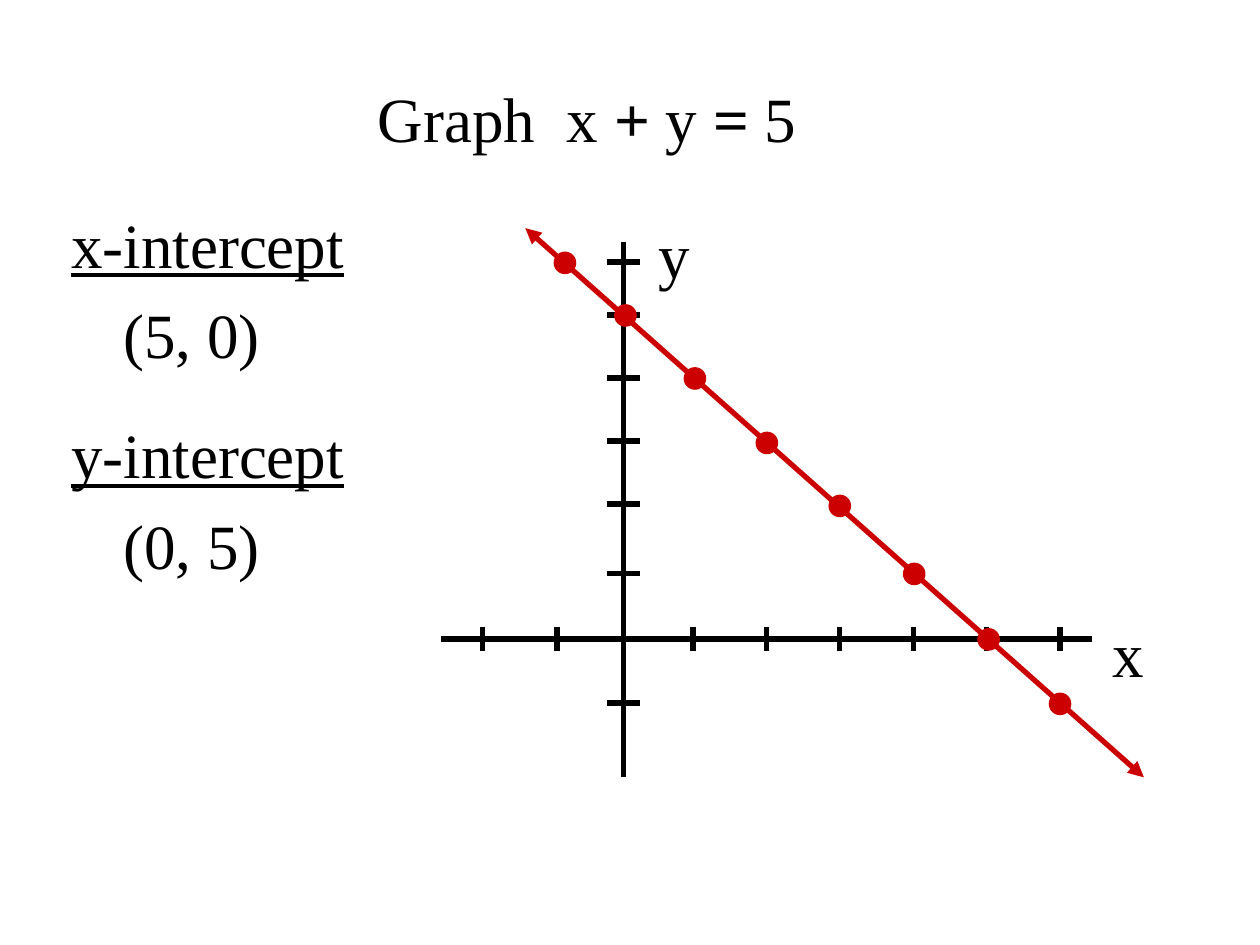
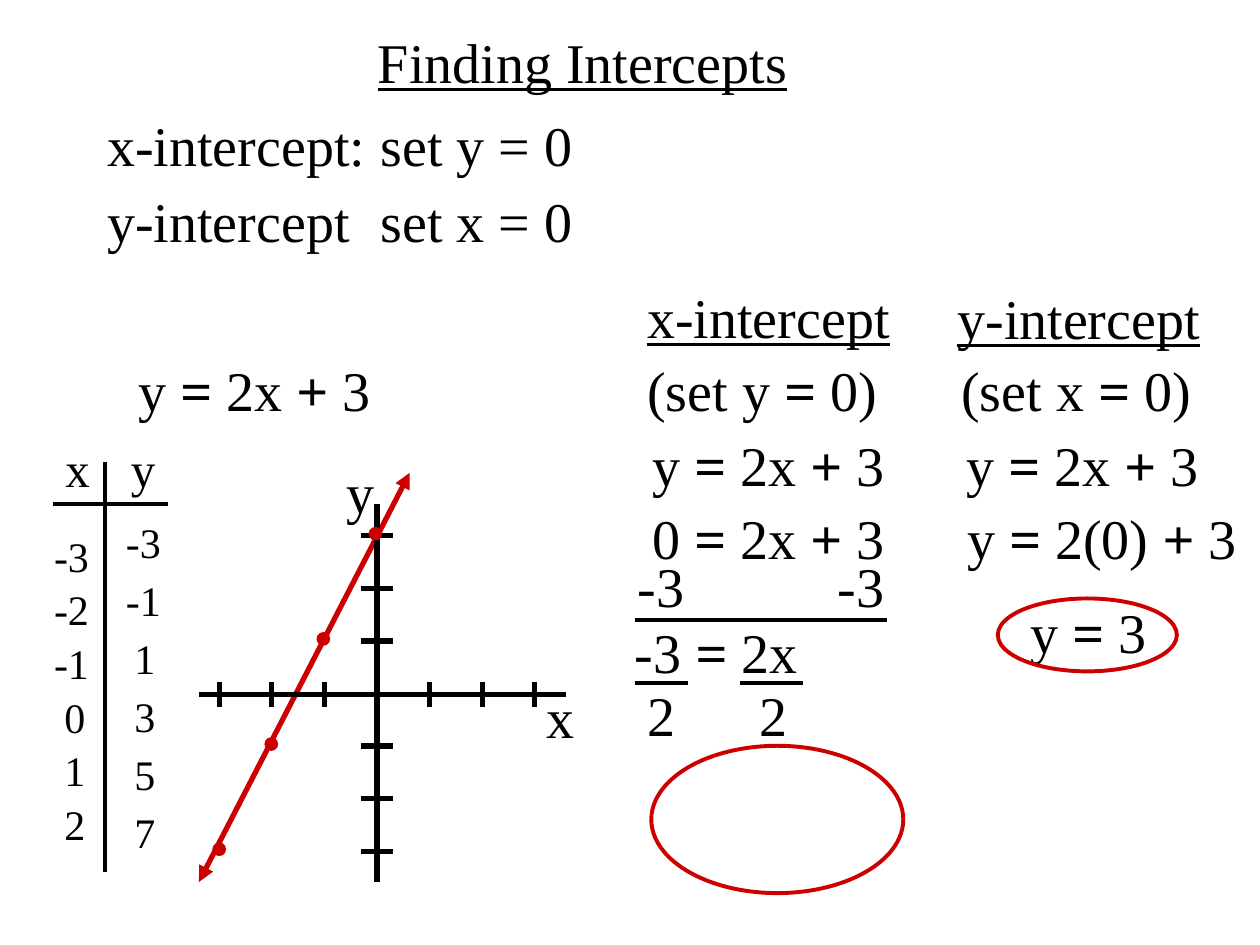
import dataclasses
import itertools
import typing

import lxml.etree
import pptx
import pptx.dml.color
import pptx.enum.shapes
import pptx.enum.text
import pptx.oxml.ns
import pptx.slide
import pptx.util

Cm = pptx.util.Cm
Pt = pptx.util.Pt
Point = tuple[float, float]


@dataclasses.dataclass(frozen=True)
class Theme:
    ink: pptx.dml.color.RGBColor = pptx.dml.color.RGBColor(0, 0, 0)
    accent: pptx.dml.color.RGBColor = pptx.dml.color.RGBColor(0xCC, 0, 0)
    font: str = "Times New Roman"
    large: int = 36
    body: int = 32
    heading: int = 28
    small: int = 24
    thick: float = 3
    medium: float = 2.25
    thin: float = 0.75


THEME = Theme()
WIDTH_SLACK = 0.05  # keeps tightly measured labels on one line


class Label(typing.NamedTuple):
    text: str
    left: float
    top: float
    width: float
    size: int = THEME.body
    underline: bool = False
    bold_operators: bool = True


class Line(typing.NamedTuple):
    start: Point
    end: Point
    weight: float = THEME.thick
    color: pptx.dml.color.RGBColor = THEME.ink
    arrows: bool = False


class Axes(typing.NamedTuple):
    """Two crossing axes with tick marks at the given positions."""
    origin: Point
    x_span: Point
    y_span: Point
    x_ticks: list[float]
    y_ticks: list[float]


def evenly(first: float, step: float, count: int, skip: int = -1) -> list[float]:
    """Equally spaced positions, leaving out the one at index skip."""
    return [first + step * index for index in range(count) if index != skip]


def add_label(slide: pptx.slide.Slide, label: Label) -> None:
    height = label.size * 1.2 / 72 * 2.54 + 0.25
    box = slide.shapes.add_textbox(
        Cm(label.left), Cm(label.top), Cm(label.width + WIDTH_SLACK), Cm(height))
    frame = box.text_frame
    frame.word_wrap = False
    frame.auto_size = pptx.enum.text.MSO_AUTO_SIZE.SHAPE_TO_FIT_TEXT
    paragraph = frame.paragraphs[0]
    for is_operator, letters in itertools.groupby(label.text, lambda c: c in "=+"):
        run = paragraph.add_run()
        run.text = "".join(letters)
        run.font.bold = is_operator and label.bold_operators
        run.font.underline = label.underline
        format_run(run, label.size)


def format_run(run: typing.Any, size: int) -> None:
    run.font.name = THEME.font
    run.font.size = Pt(size)
    run.font.color.rgb = THEME.ink


def add_line(slide: pptx.slide.Slide, line: Line) -> None:
    connector = slide.shapes.add_connector(
        pptx.enum.shapes.MSO_CONNECTOR.STRAIGHT,
        *(Cm(value) for value in line.start + line.end))
    connector.line.color.rgb = line.color
    connector.line.width = Pt(line.weight)
    qualify = pptx.oxml.ns.qn
    properties = connector.element.spPr
    if line.arrows:
        outline = properties.find(qualify("a:ln"))
        for end in ("a:headEnd", "a:tailEnd"):
            lxml.etree.SubElement(outline, qualify(end), type="triangle")
    lxml.etree.SubElement(properties, qualify("a:effectLst"))


def add_axes(slide: pptx.slide.Slide, axes: Axes) -> None:
    x, y = axes.origin
    add_line(slide, Line((axes.x_span[0], y), (axes.x_span[1], y)))
    add_line(slide, Line((x, axes.y_span[0]), (x, axes.y_span[1])))
    for tick in axes.x_ticks:
        add_line(slide, Line((tick, y - 0.25), (tick, y + 0.25)))
    for tick in axes.y_ticks:
        add_line(slide, Line((x - 0.33, tick), (x + 0.33, tick)))


def add_ellipse(slide: pptx.slide.Slide, center: Point, width: float,
                height: float, filled: bool) -> None:
    ellipse = slide.shapes.add_shape(
        pptx.enum.shapes.MSO_SHAPE.OVAL,
        Cm(center[0] - width / 2), Cm(center[1] - height / 2), Cm(width), Cm(height))
    ellipse.shadow.inherit = False
    ellipse.line.color.rgb = THEME.accent
    ellipse.line.width = Pt(THEME.thin if filled else THEME.medium)
    if filled:
        ellipse.fill.solid()
        ellipse.fill.fore_color.rgb = THEME.accent
    else:
        ellipse.fill.background()


def add_graph(slide: pptx.slide.Slide, graph_line: Line, axes: Axes,
              points: typing.Iterable[Point], dot_size: float) -> None:
    add_line(slide, graph_line)
    add_axes(slide, axes)
    for point in points:
        add_ellipse(slide, point, dot_size, dot_size, filled=True)


def add_x_values(slide: pptx.slide.Slide) -> None:
    box = slide.shapes.add_textbox(Cm(0.84), Cm(10.88), Cm(1.7), Cm(6.46))
    frame = box.text_frame
    frame.word_wrap = True
    frame.text = "-3\n-2\n-1\n 0\n 1\n 2"
    for paragraph in frame.paragraphs:
        paragraph.line_spacing = 0.65
        paragraph.space_before = Pt(12)
        format_run(paragraph.runs[0], THEME.small)


def build_graph_slide(slide: pptx.slide.Slide) -> None:
    add_graph(
        slide,
        Line((10.59, 4.6), (23.06, 15.67), color=THEME.accent, arrows=True),
        Axes(origin=(12.57, 12.88), x_span=(8.89, 22.02), y_span=(4.88, 15.67),
             x_ticks=evenly(9.73, 1.5, 2) + evenly(13.97, 1.48, 6),
             y_ticks=[5.28, 6.35, 7.62, 8.89, 10.16, 11.56, 14.17]),
        [(11.39, 5.3), (12.61, 6.36), (14.01, 7.63), (15.46, 8.93),
         (16.93, 10.2), (18.43, 11.57), (19.93, 12.89), (21.37, 14.19)],
        dot_size=0.43)
    large = THEME.large
    for label in (
        Label("Graph", 7.37, 1.47, 3.75, large),
        Label("x + y = 5", 11.18, 1.47, 5.13, large),
        Label("x", 22.17, 12.27, 1.14, large),
        Label("y", 13.03, 4.22, 1.14, large),
    ):
        add_label(slide, label)
    for name, point, top in (("x", "(5, 0)", 4.01), ("y", "(0, 5)", 8.26)):
        add_label(slide, Label(f"{name}-intercept", 1.19, top, 6.02, large, underline=True))
        add_label(slide, Label(point, 2.24, top + 1.83, 3.25, large))


def build_intercepts_slide(slide: pptx.slide.Slide) -> None:
    add_graph(
        slide,
        Line((4.01, 17.78), (8.26, 9.53), color=THEME.accent, arrows=True),
        Axes(origin=(7.6, 14), x_span=(4.01, 11.4), y_span=(10.16, 17.78),
             x_ticks=evenly(4.42, 1.06, 7, skip=3),
             y_ticks=evenly(10.8, 1.06, 7, skip=3)),
        zip(evenly(4.42, 1.05, 4), evenly(17.12, -2.12, 4)),
        dot_size=0.25)

    table_rules = [((2.11, 9.32), (2.11, 17.58)), ((1.07, 10.16), (3.38, 10.16))]
    working_rules = [((12.8, 12.5), (17.88, 12.5)), ((12.8, 13.77), (13.87, 13.77)),
                     ((14.91, 13.77), (16.18, 13.77))]
    for start, end in table_rules + working_rules:
        add_line(slide, Line(start, end, THEME.medium))

    add_x_values(slide)
    for value, top in zip(("-3", "-1", "1", "3", "5", "7"), evenly(10.29, 1.17, 6)):
        left, width = (2.29, 1.22) if value.startswith("-") else (2.46, 0.94)
        add_label(slide, Label(value, left, top, width, THEME.small))

    for label in (
        Label("Finding Intercepts", 7.37, 0.43, 8.76, underline=True),
        Label("x-intercept:", 1.91, 2.11, 5.72),
        Label("set y = 0", 7.42, 2.11, 4.45, bold_operators=False),
        Label("y-intercept", 1.91, 3.63, 5.41),
        Label("set x = 0", 7.42, 3.63, 4.45, bold_operators=False),
        Label("x", 10.77, 13.64, 1.07),
        Label("y", 6.73, 9.09, 1.07),
        Label("y = 2x + 3", 2.54, 7.04, 5.18),
        Label("x", 1.07, 8.71, 1.02, THEME.heading),
        Label("y", 2.39, 8.71, 1.02, THEME.heading),
        Label("x-intercept", 12.8, 5.56, 5.41, underline=True),
        Label("(set y = 0)", 12.8, 7.04, 5.13),
        Label("y = 2x + 3", 12.9, 8.56, 5.18),
        Label("0 = 2x + 3", 12.9, 10.03, 5.18),
        Label("-3", 12.6, 11, 1.45),
        Label("-3", 16.64, 11, 1.45),
        Label("-3 = 2x", 12.55, 12.32, 3.78),
        Label("2", 12.8, 13.59, 1.07),
        Label("2", 15.06, 13.59, 1.07),
        Label("y-intercept", 19.05, 5.59, 5.41, underline=True),
        Label("(set x = 0)", 19.13, 7.04, 5.13),
        Label("y = 2x + 3", 19.23, 8.56, 5.18),
        Label("y = 2(0) + 3", 19.25, 10.03, 5.94),
        Label("y = 3", 20.52, 11.91, 2.84),
    ):
        add_label(slide, label)

    add_ellipse(slide, (15.67, 16.52), 5.08, 2.97, filled=False)
    add_ellipse(slide, (21.92, 12.8), 3.61, 1.47, filled=False)


def main() -> None:
    presentation = pptx.Presentation()
    presentation.slide_width = Cm(25.4)
    presentation.slide_height = Cm(19.05)
    blank_layout = presentation.slide_layouts[6]
    for build_slide in (build_graph_slide, build_intercepts_slide):
        build_slide(presentation.slides.add_slide(blank_layout))
    presentation.save("out.pptx")


if __name__ == "__main__":
    main()
